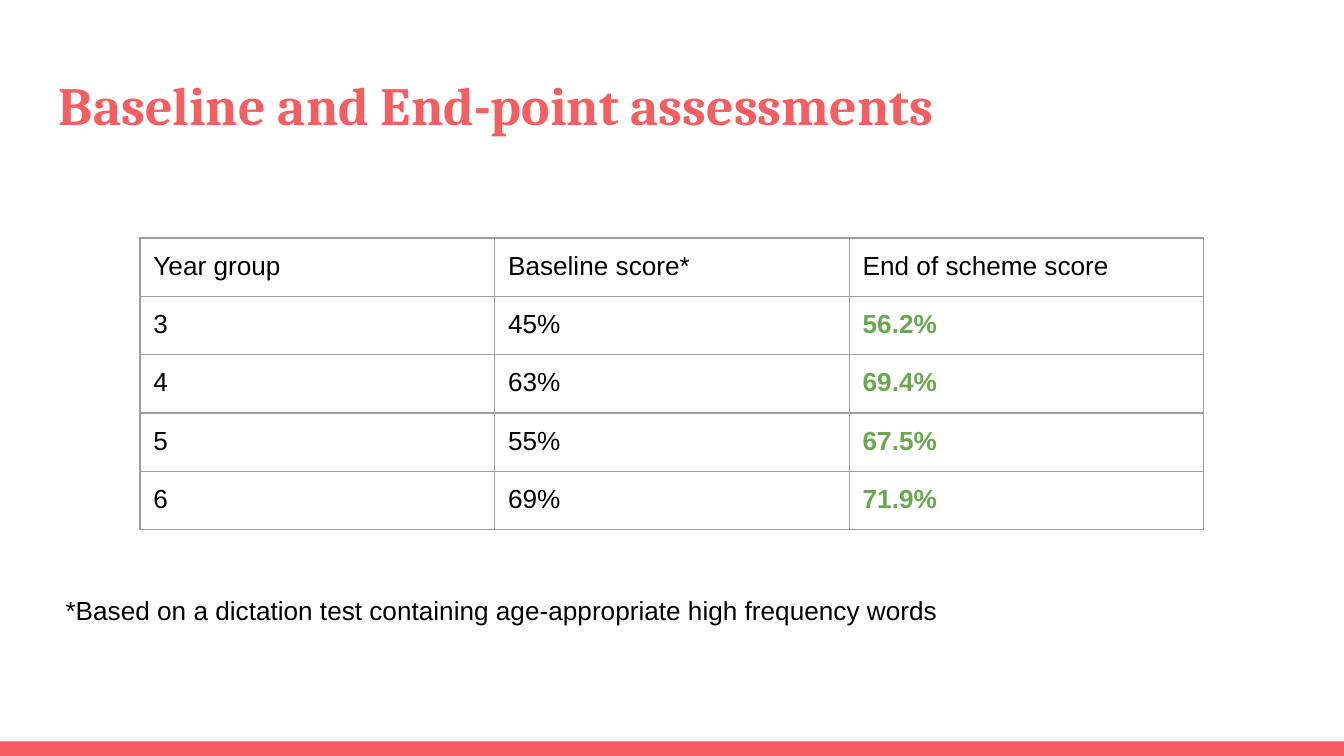
from dataclasses import dataclass

from lxml.etree import SubElement
from pptx import Presentation
from pptx.dml.color import RGBColor
from pptx.enum.shapes import MSO_SHAPE
from pptx.oxml.ns import qn
from pptx.util import Pt


@dataclass(frozen=True)
class Theme:
    """Colours, fonts, type sizes and spacing of the slide."""
    accent: str = "F55E61"
    text: str = "000000"
    gain: str = "6AA84F"
    border: str = "9E9E9E"
    heading_font: str = "Cambria"
    body_font: str = "Arial"
    heading_size: float = 28.8
    body_size: float = 14
    border_width: float = 0.75
    inset: float = 7.2


THEME = Theme()
PAGE_WIDTH, PAGE_HEIGHT = 720, 405
SCORES = [
    ("Year group", "Baseline score*", "End of scheme score"),
    ("3", "45%", "56.2%"),
    ("4", "63%", "69.4%"),
    ("5", "55%", "67.5%"),
    ("6", "69%", "71.9%"),
]


def add_span(para, text, font=THEME.body_font, size=THEME.body_size, color=THEME.text, bold=False):
    """Add one styled run to a paragraph."""
    span = para.add_run()
    span.text = text
    span.font.name = font
    span.font.size = Pt(size)
    span.font.bold = bold
    span.font.color.rgb = RGBColor.from_string(color)


def set_insets(holder):
    """Give a text frame or a cell equal margins on all sides."""
    for side in ("left", "top", "right", "bottom"):
        setattr(holder, f"margin_{side}", Pt(THEME.inset))


def add_text(page, box, text, **style):
    """Place one wrapped line of text in the box."""
    frame = page.shapes.add_textbox(*map(Pt, box)).text_frame
    frame.word_wrap = True
    set_insets(frame)
    add_span(frame.paragraphs[0], text, **style)


def add_footer_bar(page, box):
    """Place the accent bar in the box."""
    bar = page.shapes.add_shape(MSO_SHAPE.RECTANGLE, *map(Pt, box))
    bar.shadow.inherit = False
    bar.fill.solid()
    bar.fill.fore_color.rgb = RGBColor.from_string(THEME.accent)
    bar.line.fill.background()


def set_borders(cell):
    """Draw a thin line on each side of a cell."""
    properties = cell._tc.get_or_add_tcPr()
    for tag in ("a:lnL", "a:lnR", "a:lnT", "a:lnB"):
        line = SubElement(properties, qn(tag), w=str(Pt(THEME.border_width)))
        fill = SubElement(line, qn("a:solidFill"))
        SubElement(fill, qn("a:srgbClr"), val=THEME.border)


def add_score_table(page, box, scores):
    """Fill the box with an even grid of scores, the final ones highlighted."""
    width, height = box[2:]
    table = page.shapes.add_table(len(scores), len(scores[0]), *map(Pt, box)).table
    table.first_row = table.horz_banding = False
    for column in table.columns:
        column.width = Pt(width / len(scores[0]))
    for row_index, values in enumerate(scores):
        table.rows[row_index].height = Pt(height / len(scores))
        for column_index, value in enumerate(values):
            cell = table.cell(row_index, column_index)
            set_insets(cell)
            set_borders(cell)
            cell.fill.background()
            is_gain = row_index > 0 and column_index == len(values) - 1
            color = THEME.gain if is_gain else THEME.text
            add_span(cell.text_frame.paragraphs[0], value, color=color, bold=is_gain)


def main():
    """Build and save the assessment slide."""
    deck = Presentation()
    deck.slide_width, deck.slide_height = Pt(PAGE_WIDTH), Pt(PAGE_HEIGHT)
    page = deck.slides.add_slide(deck.slide_layouts[6])
    add_footer_bar(page, (0, PAGE_HEIGHT - 7.8, PAGE_WIDTH, 7.8))
    add_text(page, (24.5, 31, 671, 49), "Baseline and End-point assessments",
             font=THEME.heading_font, size=THEME.heading_size, color=THEME.accent, bold=True)
    add_score_table(page, (75, 127.5, 570, 150), SCORES)
    add_text(page, (28, 311, 630, 69),
             "*Based on a dictation test containing age-appropriate high frequency words")
    deck.save("out.pptx")


if __name__ == "__main__":
    main()
